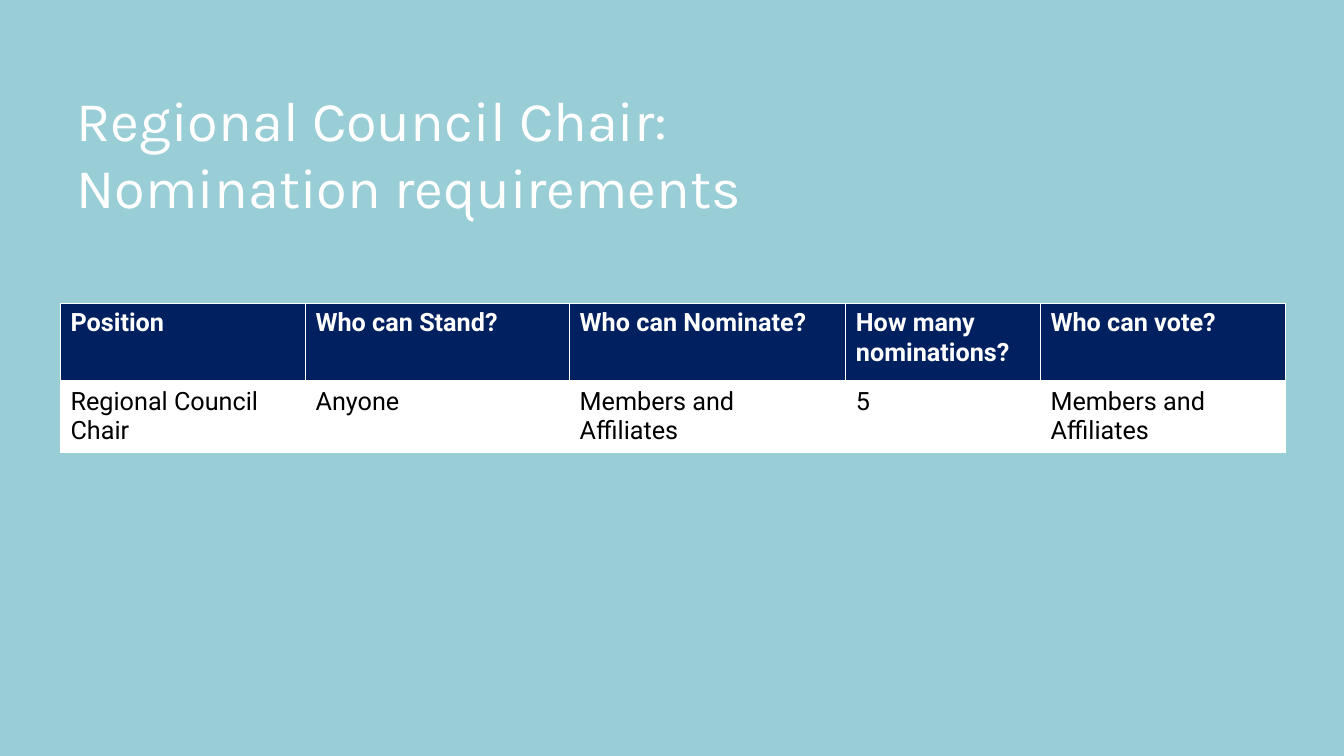
from lxml import etree
from pptx import Presentation, util as u
from pptx.dml import color
from pptx.enum import text
from pptx.oxml import ns


def paint(target, value):
    """Give a fill or font a solid colour from a hex string."""
    if hasattr(target, "solid"):
        target.solid()
        target = target.fore_color
    target.rgb = color.RGBColor.from_string(value)


class SlideBuilder:
    """Hold the style and add elements to the current slide."""

    white, navy, black, sky = "FFFFFF", "002060", "000000", "9ACED6"
    title_font = {"name": "Karla", "size": u.Pt(40), "bold": False}
    header_font = {"name": "Roboto", "size": u.Pt(18), "bold": True}
    body_font = {**header_font, "bold": False}

    def __init__(self, deck):
        """Add a title-only slide with a plain background."""
        self.slide = deck.slides.add_slide(deck.slide_layouts[5])
        paint(self.slide.background.fill, self.sky)

    def style(self, target, values):
        """Set attributes from a dict of format values."""
        for name, value in values.items():
            setattr(target, name, value)

    def add_span(self, para, words, font, ink):
        """Add one formatted span to a paragraph."""
        span = para.add_run()
        span.text = words
        self.style(span.font, font)
        paint(span.font.color, ink)

    def title(self, lines, left, top, width, height):
        """Fill the title placeholder, one paragraph a line."""
        box = self.slide.shapes.title
        self.style(box, {"left": u.Inches(left), "top": u.Inches(top),
                         "width": u.Inches(width), "height": u.Inches(height)})
        frame = box.text_frame
        self.style(frame, {"word_wrap": True, "margin_top": u.Inches(0.08),
                           "vertical_anchor": text.MSO_ANCHOR.TOP,
                           "auto_size": text.MSO_AUTO_SIZE.NONE})
        for index, words in enumerate(lines):
            para = frame.add_paragraph() if index else frame.paragraphs[0]
            self.style(para, {"alignment": text.PP_ALIGN.LEFT,
                              "line_spacing": u.Pt(48)})
            self.add_span(para, words, self.title_font, self.white)

    def borders(self, cell, bottom):
        """Draw white cell borders with the given bottom width in points."""
        props = cell._tc.get_or_add_tcPr()
        widths = {"lnL": 1, "lnR": 1, "lnT": 1, "lnB": bottom}
        for index, (side, width) in enumerate(widths.items()):
            line = etree.Element(ns.qn(f"a:{side}"), w=str(u.Pt(width)))
            fill = etree.SubElement(line, ns.qn("a:solidFill"))
            etree.SubElement(fill, ns.qn("a:srgbClr"), val=self.white)
            props.insert(index, line)

    def table(self, rows, left, top, widths, heights):
        """Add a table with a dark header row and white body rows."""
        frame = self.slide.shapes.add_table(
            len(rows), len(widths), u.Inches(left), u.Inches(top),
            u.Inches(sum(widths)), u.Inches(sum(heights)))
        grid = frame.table
        for column, width in zip(grid.columns, widths):
            column.width = u.Inches(width)
        for index, (row, height) in enumerate(zip(grid.rows, heights)):
            row.height = u.Inches(height)
            fill, ink, font, bottom = (
                (self.white, self.black, self.body_font, 1) if index
                else (self.navy, self.white, self.header_font, 3))
            for cell, words in zip(row.cells, rows[index]):
                paint(cell.fill, fill)
                self.borders(cell, bottom)
                self.add_span(cell.text_frame.paragraphs[0], words, font, ink)


def main():
    """Build the nomination requirements slide."""
    deck = Presentation()
    deck.slide_width, deck.slide_height = u.Inches(13.33), u.Inches(7.5)
    page = SlideBuilder(deck)
    page.title(["Regional Council Chair:", "Nomination requirements"],
               0.66, 0.77, 11.37, 1.45)
    page.table(
        [["Position", "Who can Stand?", "Who can Nominate?",
          "How many nominations?", "Who can vote?"],
         ["Regional Council Chair", "Anyone", "Members and Affiliates",
          "5", "Members and Affiliates"]],
        0.6, 3.01, [2.43, 2.62, 2.74, 1.93, 2.43], [0.78, 0.7])
    deck.save("out.pptx")


if __name__ == "__main__":
    main()
